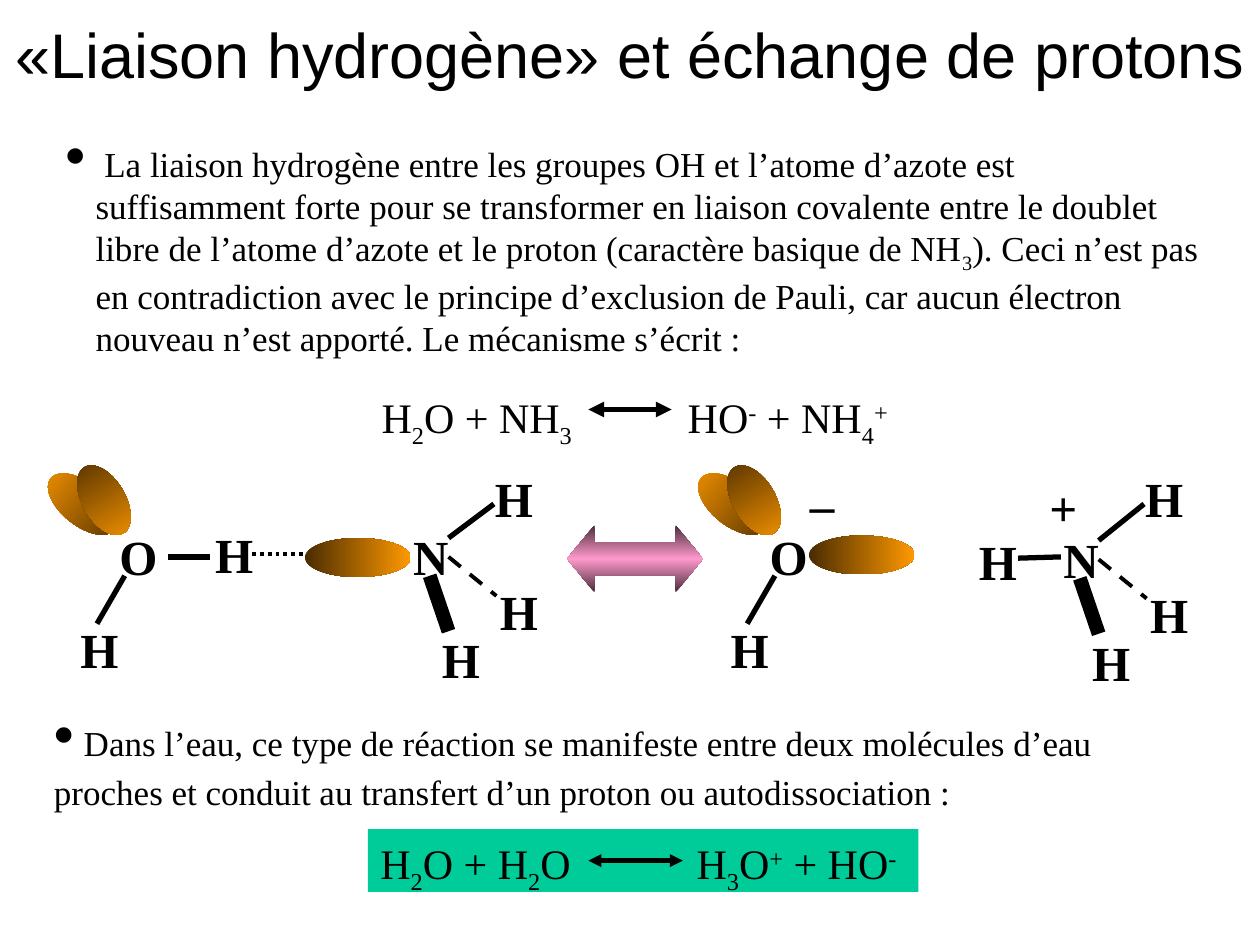
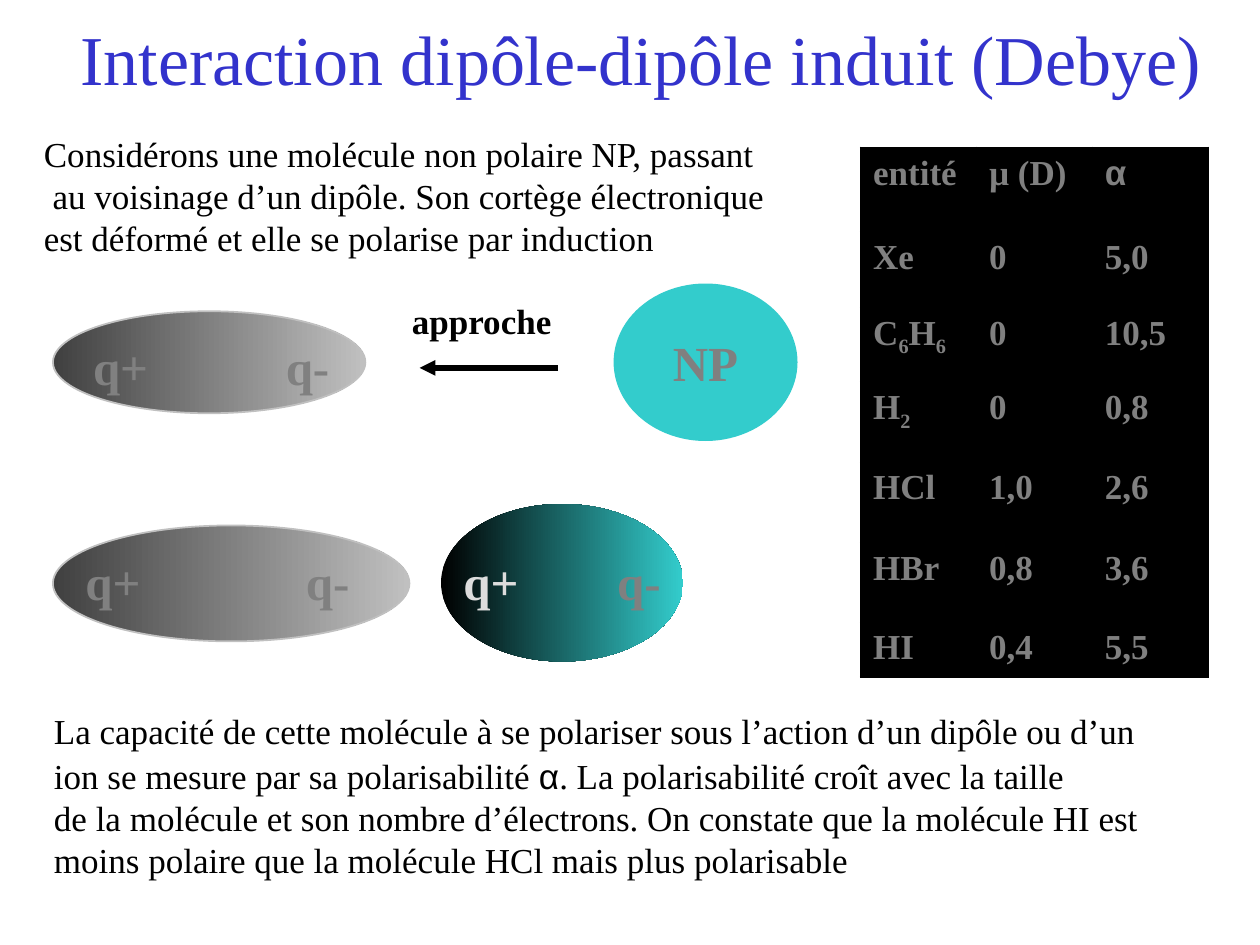
from lxml import etree
from pptx import Presentation
from pptx.dml.color import RGBColor
from pptx.enum import shapes, text
from pptx.oxml import ns
from pptx.util import Inches, Pt

BLACK, GRAY, SILVER = "000000", "808080", "C0C0C0"
ORANGE, BROWN = "FF9900", "4A2C00"
PINK, PLUM = "FF99CC", "4C2E3D"
GREEN, TURQUOISE, TITLE_BLUE, PALE = "00CC99", "33CCCC", "3333CC", "DDDDDD"
SERIF, SANS = "Times New Roman", "Arial"
BASELINES = {"~": "-25000", "^": "30000"}
SHAPES = shapes.MSO_SHAPE


def color(value):
    return RGBColor.from_string(value)


def child(parent, tag, **attributes):
    return etree.SubElement(parent, ns.qn(tag), attributes)


class Deck:
    def __init__(self):
        self.presentation = Presentation()
        self.presentation.slide_width = Inches(10)
        self.presentation.slide_height = Inches(7.5)
        self.slide = None

    def new_slide(self):
        layout = self.presentation.slide_layouts[6]
        self.slide = self.presentation.slides.add_slide(layout)

    def add_runs(self, paragraph, markup, tint=BLACK, face=SERIF, **style):
        for mark in "~^α":
            markup = markup.replace(mark, "|" + mark)
        for piece in markup.split("|"):
            if piece[:1] in BASELINES:
                self.add_run(paragraph, piece[1], tint, face, style, BASELINES[piece[0]])
                piece = piece[2:]
            elif piece.startswith("α"):
                self.add_run(paragraph, "α", tint, SANS, style)
                piece = piece[1:]
            if piece:
                self.add_run(paragraph, piece, tint, face, style)

    def add_run(self, paragraph, words, tint, face, style, baseline=None):
        run = paragraph.add_run()
        run.text = words
        run.font.color.rgb = color(tint)
        for name, value in {"name": face, **style}.items():
            setattr(run.font, name, value)
        if baseline:
            run.font._element.set("baseline", baseline)

    def text(self, left, top, width, height, *lines, wrap=False, size=20, **style):
        box = self.slide.shapes.add_textbox(
            Inches(left), Inches(top), Inches(width), Inches(height))
        frame = box.text_frame
        frame.word_wrap = wrap
        for index, line in enumerate(lines):
            paragraph = frame.add_paragraph() if index else frame.paragraphs[0]
            self.add_runs(paragraph, line, size=Pt(size), **style)
        return frame

    def label(self, words, left, top, width=0.5, tint=BLACK):
        self.text(left, top, width, 0.57, words, size=28, bold=True, tint=tint)

    def title(self, words, left, top, width, height, **style):
        frame = self.text(left, top, width, height, words, wrap=True, **style)
        frame.vertical_anchor = text.MSO_ANCHOR.MIDDLE
        frame.paragraphs[0].alignment = text.PP_ALIGN.CENTER

    def bullet(self, left, top, width, height, words, indent=0.0):
        frame = self.text(left, top, width, height, words, wrap=True)
        properties = frame.paragraphs[0]._p.get_or_add_pPr()
        properties.set("marL", str(Inches(indent)))
        properties.set("indent", str(-Inches(indent)))
        child(properties, "a:buSzPct", val="170000")
        child(properties, "a:buChar", char="•")
        return frame.paragraphs[0]

    def shape(self, kind, left, top, width, height, fills, angle=0, turn=0, outline=None):
        shape = self.slide.shapes.add_shape(
            kind, Inches(left), Inches(top), Inches(width), Inches(height))
        shape.shadow.inherit = False
        shape.rotation = turn
        if len(fills) == 1:
            shape.fill.solid()
            shape.fill.fore_color.rgb = color(fills[0])
        else:
            shape.fill.gradient()
            shape.fill.gradient_angle = angle
            stops = shape._element.spPr.find(".//" + ns.qn("a:gsLst"))
            stops.clear()
            for index, value in enumerate(fills):
                position = 100000 * index // (len(fills) - 1)
                stop = child(stops, "a:gs", pos=str(position))
                child(stop, "a:srgbClr", val=value)
        if outline:
            shape.line.color.rgb = color(outline)
            shape.line.width = Pt(1)
        else:
            shape.line.fill.background()
        return shape

    def ellipse(self, left, top, width, height, *fills, **options):
        return self.shape(SHAPES.OVAL, left, top, width, height, fills, **options)

    def line(self, x1, y1, x2, y2, width=3.0, dash=None, heads=()):
        connector = self.slide.shapes.add_connector(
            shapes.MSO_CONNECTOR.STRAIGHT, Inches(x1), Inches(y1), Inches(x2), Inches(y2))
        connector.line.color.rgb = color(BLACK)
        connector.line.width = Pt(width)
        properties = connector._element.spPr
        outline = properties.find(ns.qn("a:ln"))
        if dash:
            child(outline, "a:prstDash", val=dash)
        for end in heads:
            child(outline, end, type="triangle")
        child(properties, "a:effectLst")

    def equation(self, top, left_side, left, right_side, right):
        for words, start in ((left_side, left), (right_side, right)):
            self.text(start, top, 2.1, 0.5, words, wrap=True, size=24)

    def table(self, left, top, column_width, heights, rows):
        columns = len(rows[0])
        table = self.slide.shapes.add_table(
            len(rows), columns, Inches(left), Inches(top),
            Inches(column_width * columns), Inches(sum(heights))).table
        for column in table.columns:
            column.width = Inches(column_width)
        for row, height, values in zip(table.rows, heights, rows):
            row.height = Inches(height)
            for cell, value in zip(row.cells, values):
                self.add_runs(cell.text_frame.paragraphs[0], value, GRAY,
                              size=Pt(20), bold=True)
                properties = cell._tc.get_or_add_tcPr()
                for side in ("a:lnL", "a:lnR", "a:lnT", "a:lnB"):
                    border = child(properties, side, w=str(Pt(1)))
                    child(child(border, "a:solidFill"), "a:srgbClr", val=BLACK)
                cell.fill.solid()
                cell.fill.fore_color.rgb = color(BLACK)

    def water(self, x):
        self.label("O", x + 0.85, 4.13)
        self.ellipse(x + 0.33, 3.83, 0.65, 0.34, ORANGE, BROWN, turn=38.9)
        self.line(x + 0.99, 4.57, x + 0.77, 4.95)
        self.label("H", x + 0.54, 4.87)
        self.ellipse(x + 0.52, 3.8, 0.61, 0.34, BROWN, ORANGE, turn=59.5)

    def ammonia(self, x, y):
        self.label("N", x + 3.18, y + 4.13, 0.48)
        self.line(x + 3.56, y + 4.42, x + 3.94, y + 4.73, 2.25, "dash")
        self.label("H", x + 3.87, y + 4.57)
        self.line(x + 3.41, y + 4.57, x + 3.56, y + 5.01, 8)
        self.label("H", x + 3.41, y + 4.95)
        self.line(x + 3.56, y + 4.27, x + 3.92, 4)
        self.label("H", x + 3.83, 3.67)


def build_hydrogen_bond(deck):
    both_ends = ("a:headEnd", "a:tailEnd")
    product_shift = 5.16
    deck.new_slide()
    deck.title("«Liaison hydrogène» et échange de protons", 0, -0.08, 10, 1,
               size=36, face=SANS)
    deck.bullet(
        0.42, 1.08, 9.25, 1.9,
        " La liaison hydrogène entre les groupes OH et l’atome d’azote est suffisamment "
        "forte pour se transformer en liaison covalente entre le doublet libre de l’atome "
        "d’azote et le proton (caractère basique de NH~3). Ceci n’est pas en contradiction "
        "avec le principe d’exclusion de Pauli, car aucun électron nouveau n’est apporté. "
        "Le mécanisme s’écrit :", indent=0.24)
    deck.equation(3.06, "H~2O + NH~3", 2.93, "HO^- + NH~4^+", 5.36)
    deck.line(4.67, 3.25, 5.33, 3.25, heads=both_ends)

    deck.water(0)
    deck.line(1.33, 4.42, 1.67, 4.42)
    deck.label("H", 1.61, 4.11)
    deck.line(2, 4.4, 2.53, 4.4, 2.25, "sysDot")
    deck.ellipse(2.42, 4.27, 0.84, 0.31, BROWN, ORANGE)
    deck.ammonia(0, 0)

    exchange = deck.shape(SHAPES.LEFT_RIGHT_ARROW, 4.5, 4.17, 1.08, 0.53,
                          (PLUM, PINK, PLUM), angle=270)
    exchange.adjustments[0], exchange.adjustments[1] = 0.5, 0.41

    deck.water(product_shift)
    deck.ellipse(6.42, 4.25, 0.84, 0.31, BROWN, ORANGE)
    deck.label("_", 6.33, 3.58, 0.4)
    deck.label("H", 7.67, 4.17)
    deck.line(8.08, 4.43, 8.42, 4.42)
    deck.ammonia(product_shift, 0.02)
    deck.label("+", 8.23, 3.74, 0.42)

    water_note = deck.bullet(
        0.33, 5.62, 9.33, 0.9,
        " Dans l’eau, ce type de réaction se manifeste entre deux molécules d’eau proches "
        "et conduit au transfert d’un proton ou autodissociation :")
    water_note.line_spacing = Pt(28)
    deck.shape(SHAPES.RECTANGLE, 2.92, 6.58, 4.37, 0.5, (GREEN,))
    deck.equation(6.6, "H~2O + H~2O", 2.92, "H~3O^+ + HO^-", 5.43)
    deck.line(4.67, 6.83, 5.42, 6.83, 2.5, heads=both_ends)


def build_induced_dipole(deck):
    deck.new_slide()
    deck.title("Interaction dipôle-dipôle induit (Debye)", 0.17, -0.17, 9.83, 1.25,
               size=40, tint=TITLE_BLUE)
    deck.text(0.25, 1, 5.97, 1.1,
              "Considérons une molécule non polaire NP, passant",
              " au voisinage d’un dipôle. Son cortège électronique",
              "est déformé et elle se polarise par induction")
    conclusion = deck.text(
        0.33, 5.58, 8.85, 1.47,
        "La capacité de cette molécule à se polariser sous l’action d’un dipôle ou d’un",
        "ion se mesure par sa polarisabilité α. La polarisabilité croît avec la taille",
        "de la molécule et son nombre d’électrons. On constate que la molécule HI est",
        "moins polaire que la molécule HCl mais plus polarisable")
    conclusion.paragraphs[1].space_before = Pt(2)
    deck.table(6.83, 1.17, 0.92, (0.67, 0.6, 0.59, 0.64, 0.64, 0.63, 0.42), (
        ("entité", "µ (D)", "α"),
        ("Xe", "0", "5,0"),
        ("C~6H~6", "0", "10,5"),
        ("H~2", "0", "0,8"),
        ("HCl", "1,0", "2,6"),
        ("HBr", "0,8", "3,6"),
        ("HI", "0,4", "5,5")))

    deck.ellipse(0.42, 2.47, 2.48, 0.81, "404040", SILVER, outline=SILVER)
    deck.ellipse(0.42, 4.17, 2.83, 0.92, "404040", SILVER, outline=SILVER)
    neutral = deck.ellipse(4.87, 2.25, 1.46, 1.25, TURQUOISE)
    caption = neutral.text_frame.paragraphs[0]
    caption.alignment = text.PP_ALIGN.CENTER
    deck.add_runs(caption, "NP", GRAY, size=Pt(28), bold=True)
    deck.ellipse(3.5, 4, 1.92, 1.25, BLACK, TURQUOISE)
    for top, positive, negative, tint in (
            (2.62, 0.64, 2.17, GRAY), (4.33, 0.58, 2.33, GRAY), (4.33, 3.58, 4.8, PALE)):
        deck.label("q+", positive, top, 0.64, tint)
        deck.label("q-", negative, top, 0.56, GRAY)
    deck.text(3.17, 2.33, 1.31, 0.43, "approche", bold=True)
    deck.line(4.43, 2.92, 3.33, 2.92, heads=("a:tailEnd",))


def main():
    deck = Deck()
    build_hydrogen_bond(deck)
    build_induced_dipole(deck)
    deck.presentation.save("out.pptx")


if __name__ == "__main__":
    main()
